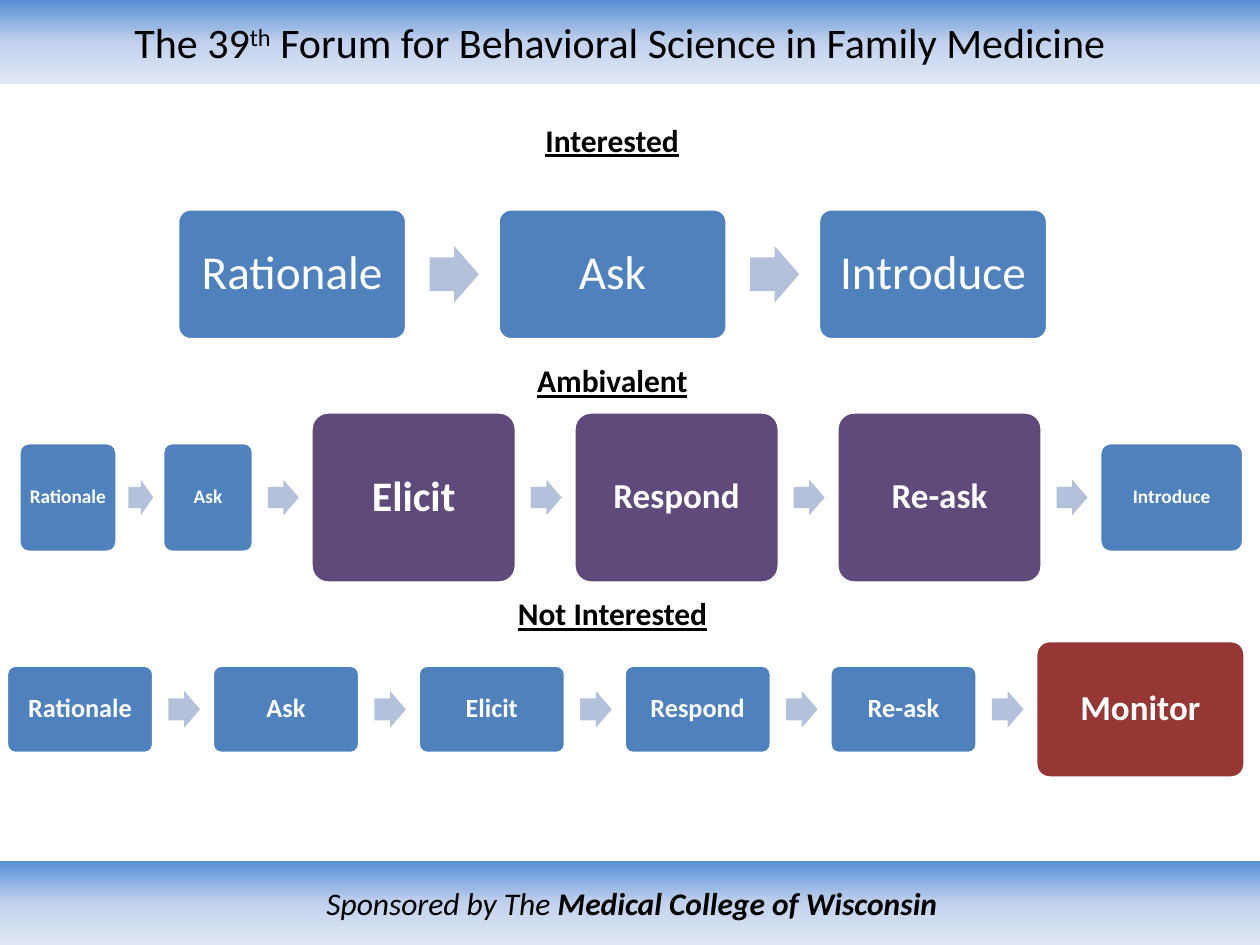
from copy import deepcopy
from dataclasses import dataclass

from pptx import Presentation
from pptx.dml.color import RGBColor
from pptx.enum import shapes, text
from pptx.oxml import ns
from pptx.util import Cm, Pt


@dataclass(frozen=True)
class Theme:
    """Hold the colours and type sizes of the slide."""
    font: str = "Calibri"
    black: str = "000000"
    white: str = "FFFFFF"
    blue: str = "4F81BD"
    purple: str = "604A7B"
    red: str = "953735"
    arrow: str = "B3C1DB"
    fade: tuple = ("558ED5", "C2D1ED", "E1E8F5")
    title: int = 24
    head: int = 18
    large: int = 27
    key: int = 20
    body: int = 15
    small: int = 11


@dataclass
class Step:
    """Describe one box of a flow, in centimetres and points."""
    label: str
    left: float
    wide: float
    high: float
    size: int
    fill: str


THEME = Theme()
SHAPE = shapes.MSO_SHAPE


def write(shape, *runs, size, color=THEME.black, bold=False, italic=False,
          under=False, align=text.PP_ALIGN.CENTER, space=None):
    """Write runs, each a string or a (string, run attributes) pair."""
    para = shape.text_frame.paragraphs[0]
    para.alignment = align
    if space:
        para.line_spacing = space
    for item in runs:
        words, extra = (item, {}) if isinstance(item, str) else item
        run = para.add_run()
        run.text = words
        font = run.font
        font.name, font.size = THEME.font, Pt(size)
        font.bold, font.italic, font.underline = bold, italic, under
        font.color.rgb = RGBColor.from_string(color)
        for key, value in extra.items():
            run._r.get_or_add_rPr().set(key, value)


def draw(parent, kind, left, top, wide, high, fill=None):
    """Add a flat shape without a shadow or a line."""
    shape = parent.shapes.add_shape(
        kind, Cm(left), Cm(top), Cm(wide), Cm(high))
    shape.shadow.inherit = False
    shape.line.fill.background()
    if fill:
        shape.fill.solid()
        shape.fill.fore_color.rgb = RGBColor.from_string(fill)
    return shape


def band(slide, top, wide):
    """Add a bar that fades from top to bottom."""
    bar = draw(slide, SHAPE.RECTANGLE, 0, top, wide, 1.7)
    bar.fill.gradient()
    bar.fill.gradient_angle = 270
    stops = bar._element.spPr.find(".//" + ns.qn("a:gsLst"))
    stops.append(deepcopy(stops[0]))
    for num, stop in enumerate(bar.fill.gradient_stops):
        stop.position = num / 2
        stop.color.rgb = RGBColor.from_string(THEME.fade[num])
    bar.text_frame.word_wrap = True
    bar.text_frame.vertical_anchor = text.MSO_ANCHOR.MIDDLE
    return bar


def head(slide, label, top, wide):
    """Add an underlined heading centred over the flows."""
    box = slide.shapes.add_textbox(
        Cm(12.36 - wide / 2), Cm(top), Cm(wide), Cm(1.02))
    box.text_frame.word_wrap = False
    box.text_frame.auto_size = text.MSO_AUTO_SIZE.SHAPE_TO_FIT_TEXT
    write(box, label, size=THEME.head, bold=True, under=True,
          align=text.PP_ALIGN.LEFT)


def card(group, step, mid, bold):
    """Add the rounded box of one step."""
    box = draw(group, SHAPE.ROUNDED_RECTANGLE, step.left,
               mid - step.high / 2, step.wide, step.high, step.fill)
    box.adjustments[0] = 0.1
    box.line.color.rgb = RGBColor.from_string(THEME.white)
    box.line.width = Pt(2)
    frame = box.text_frame
    frame.word_wrap = True
    frame.vertical_anchor = text.MSO_ANCHOR.MIDDLE
    frame.margin_left = frame.margin_right = Cm(0.1)
    frame.margin_top = frame.margin_bottom = Cm(0.1)
    write(box, step.label, size=step.size, color=THEME.white, bold=bold,
          space=0.9)


def flow(slide, steps, mid, high, bold=True):
    """Add a row of steps with an arrow in each gap."""
    group = slide.shapes.add_group_shape()
    for num, step in enumerate(steps):
        card(group, step, mid, bold)
        if num + 1 < len(steps):
            end = step.left + step.wide
            gap = steps[num + 1].left - end
            arrow = draw(group, SHAPE.RIGHT_ARROW, end + gap / 4,
                         mid - high / 2, gap * 0.54, high, THEME.arrow)
            arrow.adjustments[0] = 0.6


def row(labels, left, pitch, wide, high, size, fill=THEME.blue):
    """Return equal steps spaced by one pitch."""
    return [Step(label, left + num * pitch, wide, high, size, fill)
            for num, label in enumerate(labels)]


def main():
    """Build and save the slide."""
    deck = Presentation()
    deck.slide_width, deck.slide_height = Cm(25.4), Cm(19.05)
    slide = deck.slides.add_slide(deck.slide_layouts[6])

    top = band(slide, 0, 25.4)
    top.text_frame.margin_right = Cm(0.65)
    write(top, "The 39", ("th", {"baseline": "30000"}),
          " Forum for Behavioral Science in Family Medicine",
          size=THEME.title)
    foot = band(slide, 17.35, 25.48)
    write(foot, "Sponsored by The ",
          ("Medical College of Wisconsin", {"b": "1"}),
          size=THEME.head, italic=True)

    head(slide, "Interested", 2.31, 3.23)
    flow(slide, row(["Rationale", "Ask", "Introduce"],
                    3.58, 6.46, 4.62, 2.64, THEME.large),
         5.53, 1.14, bold=False)

    head(slide, "Ambivalent", 7.16, 3.56)
    mixed = [Step("Rationale", 0.38, 1.98, 2.21, THEME.small, THEME.blue),
             Step("Ask", 3.28, 1.83, 2.21, THEME.small, THEME.blue),
             *row(["Elicit", "Respond", "Re-ask"], 6.27, 5.3, 4.14, 3.45,
                  THEME.key, THEME.purple),
             Step("Introduce", 22.17, 2.9, 2.21, THEME.small, THEME.blue)]
    mixed[2].size = THEME.title
    flow(slide, mixed, 10.03, 0.72)

    head(slide, "Not Interested", 11.86, 4.34)
    final = row(["Rationale", "Ask", "Elicit", "Respond", "Re-ask"],
                0.13, 4.15, 2.97, 1.78, THEME.body)
    final.append(Step("Monitor", 20.88, 4.22, 2.77, THEME.key, THEME.red))
    flow(slide, final, 14.3, 0.74)

    deck.save("out.pptx")


if __name__ == "__main__":
    main()
